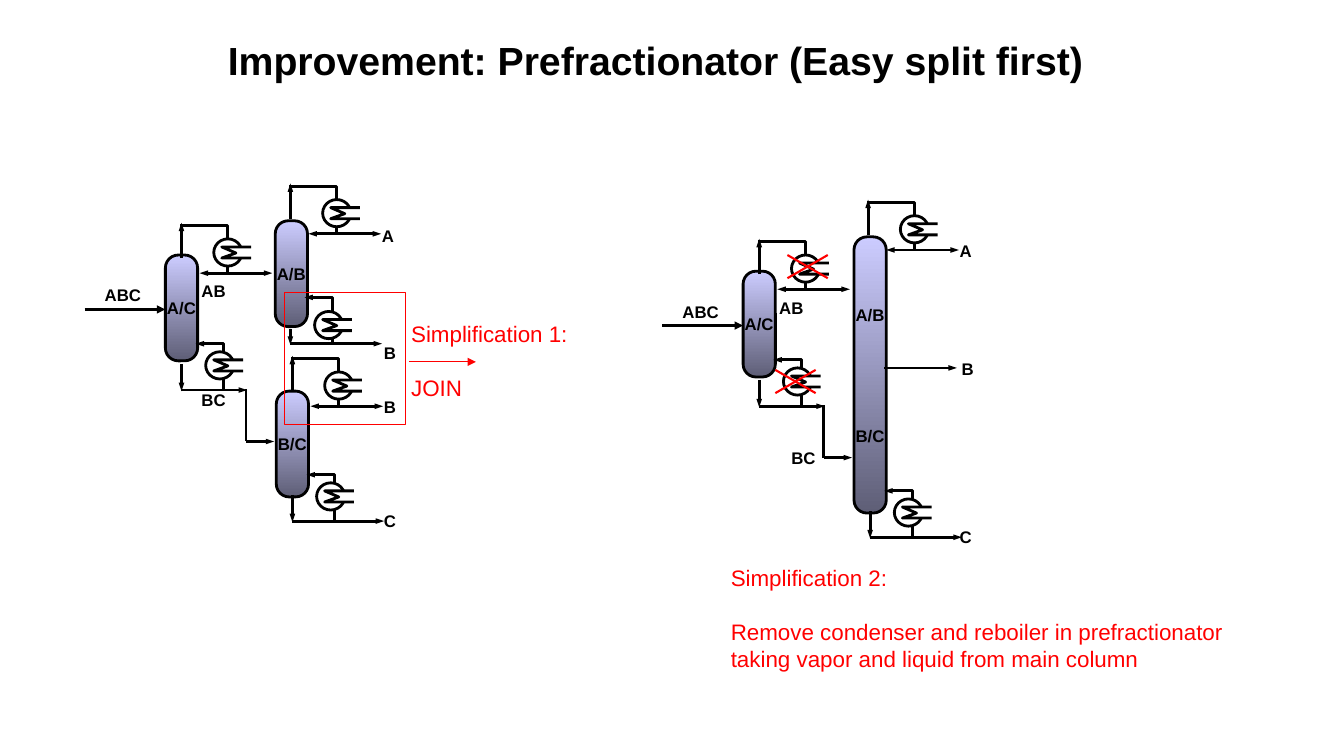
from dataclasses import dataclass

from lxml import etree
from pptx import Presentation
from pptx import util as u
from pptx.dml.color import RGBColor
from pptx.enum import shapes, text
from pptx.oxml.ns import qn

PX = 9144  # EMU per px, 100 px to the inch


@dataclass(frozen=True)
class Theme:
    font: str = "Arial"
    ink: str = "000000"
    accent: str = "FF0000"
    paper: str = "FFFFFF"
    column_top: str = "CCCCFF"
    column_bottom: str = "5E5E76"
    title_size: int = 28
    note_size: int = 16
    label_size: int = 12
    pipe: float = 2
    cross: float = 1.5
    thin: float = 0.75


THEME = Theme()


def px(*lengths):
    return [u.Emu(length * PX) for length in lengths]


def rgb(color):
    return RGBColor.from_string(color)


def set_line(shape, color=THEME.ink, width=THEME.pipe):
    shape.line.color.rgb = rgb(color)
    shape.line.width = u.Pt(width)


def add_arrowheads(shape, ends, width="sm"):
    """Put triangles on the named ends ("headEnd" before "tailEnd")."""
    outline = shape.element.spPr.find(qn("a:ln"))
    for end in ends:
        etree.SubElement(outline, qn(f"a:{end}"), type="triangle", w=width, len="med")


def set_text(frame, lines, size, color=THEME.ink, bold=False):
    frame.text = "\n".join(lines)
    for paragraph in frame.paragraphs:
        for run in paragraph.runs:
            run.font.name = THEME.font
            run.font.size = u.Pt(size)
            run.font.bold = bold
            run.font.color.rgb = rgb(color)


def add_title(slide, words):
    title = slide.shapes.title
    title.left, title.top, title.width, title.height = px(226, 36, 866, 47)
    frame = title.text_frame
    frame.margin_left = frame.margin_top = frame.margin_right = frame.margin_bottom = 0
    frame.auto_size = text.MSO_AUTO_SIZE.NONE
    frame.vertical_anchor = text.MSO_ANCHOR.MIDDLE
    set_text(frame, [words], THEME.title_size, bold=True)
    frame.paragraphs[0].alignment = text.PP_ALIGN.LEFT


def add_line(slide, start, end, ends=(), color=THEME.ink, width=THEME.pipe, head="sm"):
    line = slide.shapes.add_connector(shapes.MSO_CONNECTOR.STRAIGHT, *px(*start, *end))
    set_line(line, color, width)
    add_arrowheads(line, ends, head)
    etree.SubElement(line.element.spPr, qn("a:effectLst"))


def add_arrow(slide, start, end, **style):
    add_line(slide, start, end, ["tailEnd"], **style)


def add_polyline(slide, points):
    builder = slide.shapes.build_freeform(*points[0], scale=PX)
    builder.add_line_segments(points[1:], close=False)
    outline = builder.convert_to_shape()
    outline.shadow.inherit = False
    outline.fill.background()
    set_line(outline)
    return outline


def add_label(slide, x, y, words, width=63):
    box = slide.shapes.add_textbox(*px(x, y, width, 30))
    box.text_frame.word_wrap = True
    set_text(box.text_frame, [words], THEME.label_size, bold=True)


def add_note(slide, bounds, lines):
    """Add a red remark, its first line set apart from the rest."""
    box = slide.shapes.add_textbox(*px(*bounds))
    box.text_frame.word_wrap = False
    set_text(box.text_frame, lines, THEME.note_size, THEME.accent)
    box.text_frame.paragraphs[1].space_before = u.Pt(19)


def add_column(slide, x, y, height, splits):
    column = slide.shapes.add_shape(shapes.MSO_SHAPE.ROUNDED_RECTANGLE, *px(x, y, 32, height))
    column.shadow.inherit = False
    column.adjustments[0] = 0.4
    column.fill.gradient()
    column.fill.gradient_angle = 270
    for stop, color in zip(column.fill.gradient_stops, (THEME.column_top, THEME.column_bottom)):
        stop.color.rgb = rgb(color)
    set_line(column)
    frame = column.text_frame
    frame.word_wrap = False
    frame.vertical_anchor = text.MSO_ANCHOR.MIDDLE
    set_text(frame, splits, THEME.label_size, bold=True)
    for paragraph in frame.paragraphs:
        paragraph.alignment = text.PP_ALIGN.CENTER
    for paragraph in frame.paragraphs[1:]:
        paragraph.space_before = u.Pt(72)


def add_exchanger(slide, x, y):
    shell = slide.shapes.add_shape(shapes.MSO_SHAPE.OVAL, *px(x, y, 28, 27))
    shell.shadow.inherit = False
    set_line(shell)
    coil_points = [(37, 19), (8, 19), (22, 14), (8, 8), (37, 8)]
    coil = add_polyline(slide, [(x + dx, y + dy) for dx, dy in coil_points])
    for part in (shell, coil):
        part.fill.solid()
        part.fill.fore_color.rgb = rgb(THEME.paper)


def add_condenser(slide, x, y):
    """Draw the overhead system; x is the vapour riser, y the reflux line."""
    add_arrow(slide, (x, y - 15), (x, y - 50))
    add_polyline(slide, [(x - 1, y - 47), (x + 46, y - 47), (x + 46, y)])
    add_line(slide, (x + 18, y), (x + 90, y), ["headEnd", "tailEnd"])
    add_exchanger(slide, x + 32, y - 34)


def add_reboiler(slide, x, y, run=91, drop=26, rise=38):
    """Draw the bottom system; x is the downcomer, y the product line."""
    add_arrow(slide, (x, y), (x + run, y))
    add_arrow(slide, (x, y - drop), (x, y + 1))
    vapour_return = add_polyline(slide, [(x + 42, y - 1), (x + 42, y - 46), (x + 14, y - 46)])
    add_arrowheads(vapour_return, ["tailEnd"])
    add_exchanger(slide, x + 24, y - rise)


def add_prefractionator(slide, x, y, bc_label):
    """Draw the A/C column with feed, both exchangers and its links onward."""
    add_arrow(slide, (x - 80, y + 54), (x, y + 54), head="med")
    add_label(slide, x - 70, y + 25, "ABC", 79)
    add_column(slide, x, y, 105, ["A/C"])
    add_condenser(slide, x + 16, y + 18)
    add_label(slide, x + 26, y + 21, "AB")
    add_reboiler(slide, x + 16, y + 134, run=65)
    add_label(slide, *bc_label, "BC")
    add_line(slide, (x + 80, y + 133), (x + 80, y + 185))
    add_arrow(slide, (x + 80, y + 185), (x + 108, y + 185))


def add_three_columns(slide):
    add_prefractionator(slide, 164, 253, (190, 382))
    add_column(slide, 274, 388, 105, ["B/C"])
    add_reboiler(slide, 290, 517)
    add_condenser(slide, 290, 403)
    add_column(slide, 273, 219, 105, ["A/B"])
    add_condenser(slide, 288, 232)
    add_reboiler(slide, 288, 341, drop=15, rise=32)
    for words, x, y in [("A", 369, 219), ("B", 371, 335), ("B", 371, 389), ("C", 371, 502)]:
        add_label(slide, x, y, words, 32)


def add_joined_columns(slide):
    add_prefractionator(slide, 737, 269, (775, 439))
    add_column(slide, 847, 235, 274, ["A/B", "B/C"])
    add_reboiler(slide, 863, 533)
    add_condenser(slide, 861, 248)
    add_arrow(slide, (877, 365), (949, 365))
    for words, x, y in [("A", 942, 234), ("B", 944, 351), ("C", 942, 518)]:
        add_label(slide, x, y, words, 32)


def add_cross(slide, x, y):
    for start, end in [(y, y + 23), (y + 23, y)]:
        add_line(slide, (x, start), (x + 40, end), color=THEME.accent, width=THEME.cross)


def add_join_frame(slide):
    frame = slide.shapes.add_shape(shapes.MSO_SHAPE.RECTANGLE, *px(282, 290, 120, 131))
    frame.shadow.inherit = False
    frame.fill.background()
    set_line(frame, THEME.accent, THEME.thin)


def main():
    presentation = Presentation()
    presentation.slide_width, presentation.slide_height = px(1333, 750)
    slide = presentation.slides.add_slide(presentation.slide_layouts[5])
    add_title(slide, "Improvement: Prefractionator (Easy split first)")
    add_three_columns(slide)
    add_joined_columns(slide)
    add_join_frame(slide)
    add_cross(slide, 781, 253)
    add_cross(slide, 769, 367)
    add_note(slide, (398, 313, 183, 91), ["Simplification 1:", "JOIN"])
    add_arrow(slide, (406, 359), (472, 359), color=THEME.accent, width=THEME.thin, head="med")
    add_note(slide, (715, 555, 514, 118), [
        "Simplification 2:",
        "Remove condenser and reboiler in prefractionator",
        "taking vapor and liquid from main column",
    ])
    presentation.save("out.pptx")


if __name__ == "__main__":
    main()
